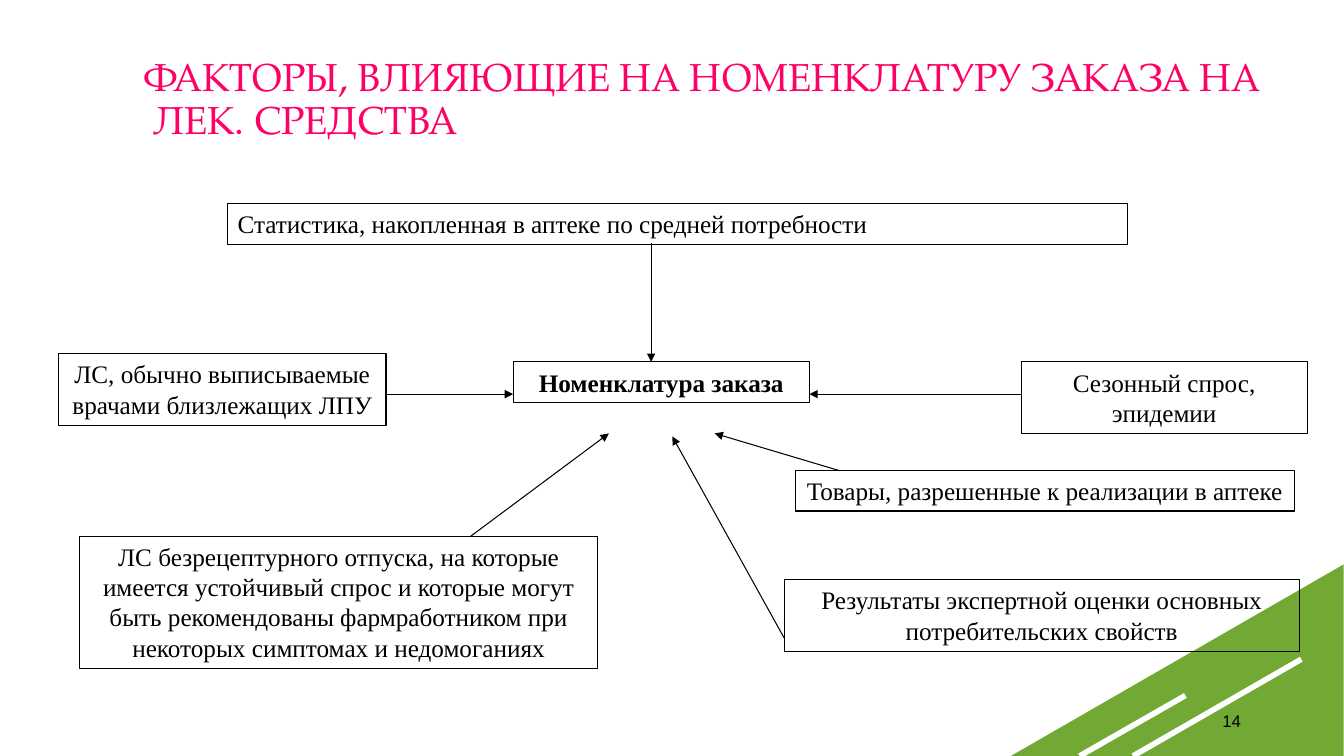
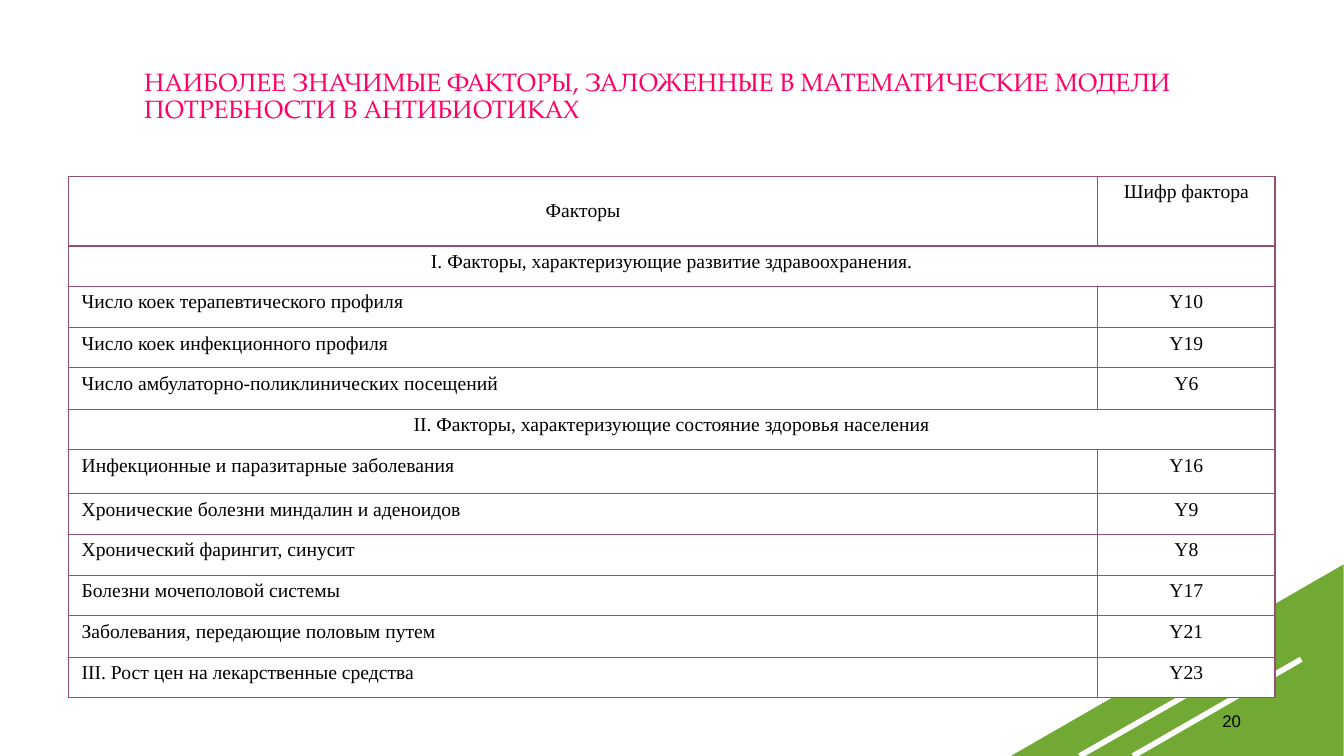
from lxml.etree import SubElement
from pptx import Presentation
from pptx.dml.color import RGBColor
from pptx.enum.shapes import MSO_CONNECTOR, MSO_SHAPE
from pptx.enum.text import MSO_ANCHOR, MSO_AUTO_SIZE, PP_ALIGN
from pptx.oxml.ns import qn
from pptx.util import Emu, Pt

COLORS = {"green": "71A934", "pink": "FF0066", "plum": "954F72", "black": "000000", "white": "FFFFFF"}
TITLE_FONT, BODY_FONT, NUMBER_FONT = "TeX Gyre Pagella", "Times New Roman", "Arial"

BOXES = [
    ("Номенклатура заказа", (509, 359, 294, 40), {"bold": True}),
    ("Статистика, накопленная в аптеке по средней потребности", (226, 202, 893, 41), {"align": PP_ALIGN.LEFT}),
    ("ЛС, обычно выписываемые врачами близлежащих ЛПУ", (58, 351, 325, 71), {}),
    ("Сезонный спрос, эпидемии", (1013, 359, 284, 71), {}),
    ("ЛС безрецептурного отпуска, на которые имеется устойчивый спрос и которые могут быть "
     "рекомендованы фармработником при некоторых симптомах и недомоганиях", (79, 532, 514, 131), {}),
    ("Товары, разрешенные к реализации в аптеке", (789, 467, 495, 40), {}),
    ("Результаты экспертной оценки основных потребительских свойств", (778, 575, 511, 71), {}),
]
ARROWS = [
    (646, 241, 646, 359),
    (1013, 391, 803, 391),
    (383, 391, 509, 391),
    (467, 532, 604, 430),
    (833, 467, 709, 430),
    (778, 633, 667, 433),
]
FACTORS = [
    ("Факторы", "Шифр фактора"),
    ("I. Факторы, характеризующие развитие здравоохранения.", None),
    ("Число коек терапевтического профиля", "Y10"),
    ("Число коек инфекционного профиля", "Y19"),
    ("Число амбулаторно-поликлинических посещений", "Y6"),
    ("II. Факторы, характеризующие состояние здоровья населения", None),
    ("Инфекционные и паразитарные заболевания", "Y16"),
    ("Хронические болезни миндалин и аденоидов", "Y9"),
    ("Хронический фарингит, синусит", "Y8"),
    ("Болезни мочеполовой системы", "Y17"),
    ("Заболевания, передающие половым путем", "Y21"),
    ("III. Рост цен на лекарственные средства", "Y23"),
]


def px(n):
    """Turn px, a hundred to the inch, into EMU."""
    return Emu(n * 9144)


def rgb(name):
    """Look up a named colour."""
    return RGBColor.from_string(COLORS[name])


def write(tf, text, font=BODY_FONT, size=18, color="black", bold=False,
          align=PP_ALIGN.CENTER, anchor=MSO_ANCHOR.TOP, spacing=None):
    """Fill a text frame with one formatted paragraph."""
    tf.word_wrap = True
    tf.vertical_anchor = anchor
    p = tf.paragraphs[0]
    p.text = text
    p.alignment = align
    p.line_spacing = spacing
    for r in p.runs:
        r.font.name, r.font.size, r.font.bold = font, Pt(size), bold
        r.font.color.rgb = rgb(color)
    for br in p._p.findall(qn("a:br")):
        SubElement(br, qn("a:rPr"), sz=str(size * 100))


def add_line(shapes, ends, color="black", width=0.75, arrow=False):
    """Draw a straight line, with an optional arrowhead at its end."""
    line = shapes.add_connector(MSO_CONNECTOR.STRAIGHT, *map(px, ends))
    line.line.color.rgb = rgb(color)
    line.line.width = Pt(width)
    if arrow:
        SubElement(line.line._get_or_add_ln(), qn("a:tailEnd"), type="triangle")
    SubElement(line._element.spPr, qn("a:effectLst"))


def add_box(s, text, at, **fmt):
    """Draw an outlined box with text."""
    sp = s.shapes.add_shape(MSO_SHAPE.RECTANGLE, *map(px, at))
    sp.shadow.inherit = False
    sp.fill.background()
    sp.line.color.rgb = rgb("black")
    sp.line.width = Pt(0.75)
    write(sp.text_frame, text, **fmt)
    sp.text_frame.auto_size = MSO_AUTO_SIZE.SHAPE_TO_FIT_TEXT


def decorate_layout(layout, s):
    """Give the layout the green corner with its two white stripes."""
    for ph in list(layout.placeholders):
        if ph.placeholder_format.idx:
            ph.element.getparent().remove(ph.element)
    group = s.shapes.add_group_shape()
    corner = group.shapes.add_shape(MSO_SHAPE.RIGHT_TRIANGLE, *map(px, (1003, 560, 330, 190)))
    corner.shadow.inherit = False
    corner.fill.solid()
    corner.fill.fore_color.rgb = rgb("green")
    corner.line.fill.background()
    corner._element.spPr.find(qn("a:xfrm")).set("flipH", "1")
    for ends in ((1071, 750, 1176, 690), (1124, 750, 1291, 654)):
        add_line(group.shapes, ends, color="white", width=4)
    layout.shapes.element.append(group.element)


def add_heading(s, title, at, size, number):
    """Place the title and the slide number."""
    sp = s.shapes.title
    sp.left, sp.top, sp.width, sp.height = map(px, at)
    write(sp.text_frame, title, font=TITLE_FONT, size=size, color="pink",
          align=PP_ALIGN.LEFT, anchor=MSO_ANCHOR.MIDDLE, spacing=0.9)
    sp.text_frame.auto_size = MSO_AUTO_SIZE.NONE
    box = s.shapes.add_textbox(*map(px, (1136, 695, 105, 40)))
    write(box.text_frame, str(number), font=NUMBER_FONT, size=12,
          align=PP_ALIGN.RIGHT, anchor=MSO_ANCHOR.MIDDLE)


def style_cell(cell):
    """Give a cell its margins, borders and white fill."""
    cell.margin_left = cell.margin_right = px(13)
    cell.margin_top = cell.margin_bottom = px(5)
    tcPr = cell._tc.get_or_add_tcPr()
    for side in "LRTB":
        ln = SubElement(tcPr, qn(f"a:ln{side}"), w=str(Pt(1)))
        SubElement(SubElement(ln, qn("a:solidFill")), qn("a:srgbClr"), val=COLORS["plum"])
    cell.fill.solid()
    cell.fill.fore_color.rgb = rgb("white")


def add_factor_table(s):
    """Build the table of factors, with section rows across both columns."""
    heights = [40 + (i % 2 == 0) for i in range(len(FACTORS))]
    heights[0], heights[6] = 69, 44
    at = map(px, (68, 175, 1197, sum(heights)))
    table = s.shapes.add_table(len(FACTORS), 2, *at).table
    table.first_row = table.horz_banding = False
    table.columns[0].width, table.columns[1].width = px(1021), px(176)
    for i, (factor, code) in enumerate(FACTORS):
        table.rows[i].height = px(heights[i])
        name, mark = table.cell(i, 0), table.cell(i, 1)
        style_cell(name)
        style_cell(mark)
        centred = i == 0 or code is None
        write(name.text_frame, factor, size=14, align=PP_ALIGN.CENTER if centred else PP_ALIGN.JUSTIFY)
        if code is None:
            name.merge(mark)
        else:
            write(mark.text_frame, code, size=14)
    table.cell(0, 0).vertical_anchor = MSO_ANCHOR.MIDDLE


def main():
    """Build and save both slides."""
    prs = Presentation()
    prs.slide_width, prs.slide_height = Emu(12192000), px(750)
    layout = prs.slide_layouts[5]

    s = prs.slides.add_slide(layout)
    decorate_layout(layout, s)
    add_heading(s, "ФАКТОРЫ, ВЛИЯЮЩИЕ НА НОМЕНКЛАТУРУ ЗАКАЗА НА\v ЛЕК. СРЕДСТВА",
                (133, 33, 1200, 133), 28, 14)
    for text, at, fmt in BOXES:
        add_box(s, text, at, **fmt)
    for ends in ARROWS:
        add_line(s.shapes, ends, arrow=True)

    s = prs.slides.add_slide(layout)
    add_heading(s, "НАИБОЛЕЕ ЗНАЧИМЫЕ ФАКТОРЫ, ЗАЛОЖЕННЫЕ В МАТЕМАТИЧЕСКИЕ МОДЕЛИ ПОТРЕБНОСТИ В АНТИБИОТИКАХ",
                (133, 42, 1200, 108), 18, 20)
    add_factor_table(s)
    prs.save("out.pptx")


if __name__ == "__main__":
    main()
